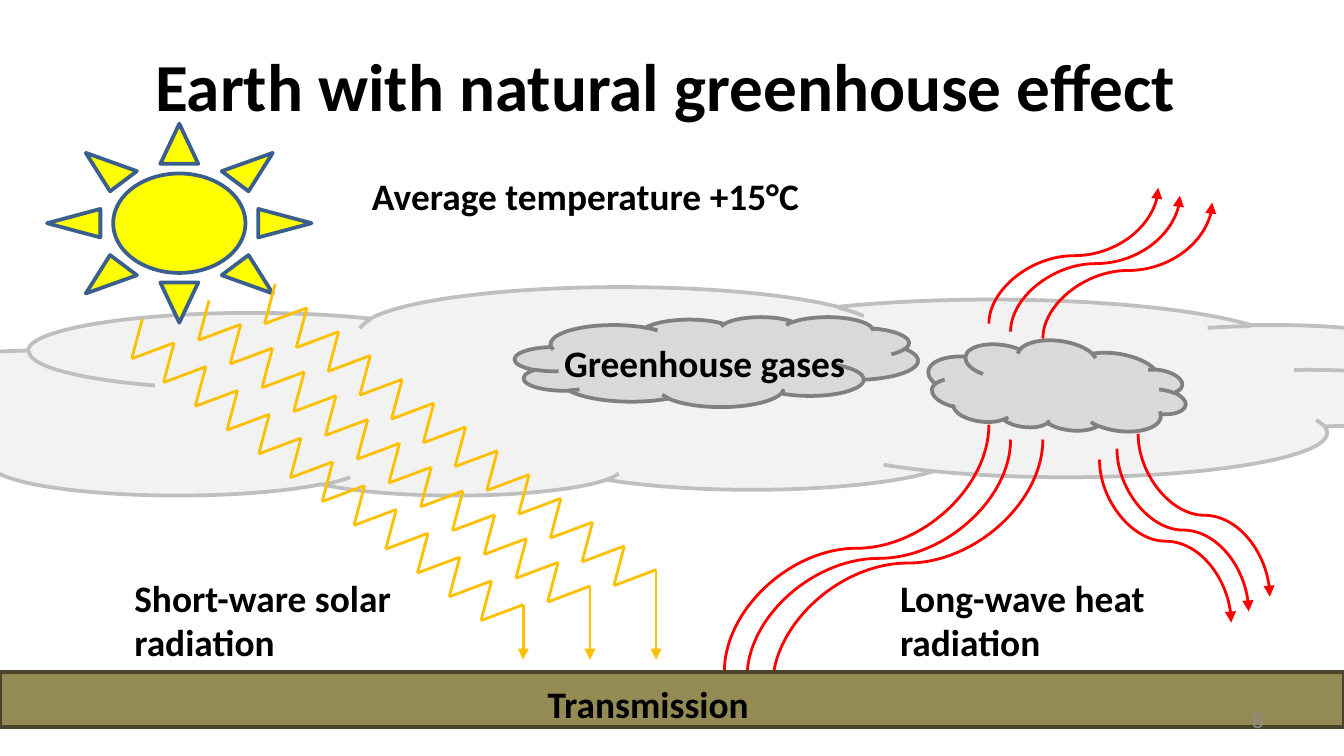
from dataclasses import dataclass

from lxml import etree
from pptx import Presentation
from pptx.dml.color import RGBColor
from pptx.enum.shapes import MSO_CONNECTOR, MSO_SHAPE
from pptx.enum.text import MSO_ANCHOR, PP_ALIGN
from pptx.oxml.ns import qn
from pptx.util import Cm, Pt

STRAIGHT, CURVE = MSO_CONNECTOR.STRAIGHT, MSO_CONNECTOR.CURVE
CLOUD, SUN, RECTANGLE = MSO_SHAPE.CLOUD, MSO_SHAPE.SUN, MSO_SHAPE.RECTANGLE
LEFT, CENTER, RIGHT = PP_ALIGN.LEFT, PP_ALIGN.CENTER, PP_ALIGN.RIGHT
TOP, MIDDLE = MSO_ANCHOR.TOP, MSO_ANCHOR.MIDDLE

BLACK = RGBColor(0x00, 0x00, 0x00)
PAGE_GREY = RGBColor(0x8C, 0x8C, 0x8C)
AIR_FILL = RGBColor(0xF2, 0xF2, 0xF2)
AIR_LINE = RGBColor(0xBF, 0xBF, 0xBF)
GAS_FILL = RGBColor(0xD9, 0xD9, 0xD9)
GAS_LINE = RGBColor(0x80, 0x80, 0x80)
SUN_FILL = RGBColor(0xFF, 0xFF, 0x00)
SUN_LINE = RGBColor(0x3A, 0x5F, 0x8C)
GROUND_FILL = RGBColor(0x94, 0x8A, 0x54)
GROUND_LINE = RGBColor(0x4A, 0x45, 0x2A)
SOLAR = RGBColor(0xFF, 0xC0, 0x00)
HEAT = RGBColor(0xFF, 0x00, 0x00)

# Solar rays, in cm
TEETH = 12
PITCH_X, PITCH_Y = 0.6, 0.45
VALLEY_X, VALLEY_Y = -0.2, 0.75
RAY_BOTTOM = 12.47


@dataclass(frozen=True)
class Point:
    """A place on the slide, in cm."""
    x: float
    y: float

    def moved(self, dx: float, dy: float) -> "Point":
        return Point(self.x + dx, self.y + dy)


@dataclass(frozen=True)
class Body:
    """A filled preset shape, in cm and degrees."""
    preset: MSO_SHAPE
    left: float
    top: float
    width: float
    height: float
    fill: RGBColor
    line: RGBColor
    rotation: float = 0


def draw_body(shapes, body: Body) -> None:
    shape = shapes.add_shape(body.preset, Cm(body.left), Cm(body.top),
                             Cm(body.width), Cm(body.height))
    shape.shadow.inherit = False
    shape.rotation = body.rotation
    shape.fill.solid()
    shape.fill.fore_color.rgb = body.fill
    shape.line.color.rgb = body.line
    shape.line.width = Pt(2)


def draw_line(shapes, kind: MSO_CONNECTOR, start: Point, end: Point,
              color: RGBColor, arrow: bool = False):
    line = shapes.add_connector(kind, Cm(start.x), Cm(start.y), Cm(end.x), Cm(end.y))
    line.line.color.rgb = color
    line.line.width = Pt(1.5)
    if arrow:
        etree.SubElement(line.line._get_or_add_ln(), qn("a:tailEnd"), type="triangle")
    etree.SubElement(line._element.spPr, qn("a:effectLst"))
    return line


def draw_heat_curve(shapes, start: Point, end: Point, arrow: bool = True) -> None:
    """An S-curve that leaves and arrives vertically: a quarter-turned connector."""
    dx, dy = end.x - start.x, end.y - start.y
    center = start.moved(dx / 2, dy / 2)
    rising = dy < 0
    reach_x = abs(dy) / 2
    reach_y = dx / 2 if rising else -dx / 2
    curve = draw_line(shapes, CURVE, center.moved(reach_x, reach_y),
                      center.moved(-reach_x, -reach_y), HEAT, arrow)
    curve._element.spPr.find(qn("a:xfrm")).set("rot", str((90 if rising else 270) * 60000))


def draw_solar_ray(shapes, start: Point) -> None:
    peak = start
    for tooth in range(1, TEETH + 1):
        valley = peak.moved(VALLEY_X, VALLEY_Y)
        next_peak = start.moved(tooth * PITCH_X, tooth * PITCH_Y)
        draw_line(shapes, STRAIGHT, peak, valley, SOLAR)
        draw_line(shapes, STRAIGHT, valley, next_peak, SOLAR)
        peak = next_peak
    draw_line(shapes, STRAIGHT, peak, Point(peak.x, RAY_BOTTOM), SOLAR, arrow=True)


def write(shapes, text: str, left: float, top: float, width: float, height: float, *,
          size: float = 20, bold: bool = True, color: RGBColor = BLACK,
          align: PP_ALIGN = LEFT, anchor: MSO_ANCHOR = TOP) -> None:
    frame = shapes.add_textbox(Cm(left), Cm(top), Cm(width), Cm(height)).text_frame
    frame.word_wrap = True
    frame.vertical_anchor = anchor
    paragraph = frame.paragraphs[0]
    paragraph.alignment = align
    run = paragraph.add_run()
    run.text = text
    run.font.name = "Calibri"
    run.font.size = Pt(size)
    run.font.bold = bold
    run.font.color.rgb = color


def main() -> None:
    prs = Presentation()
    prs.slide_width, prs.slide_height = Cm(25.4), Cm(14.29)
    shapes = prs.slides.add_slide(prs.slide_layouts[6]).shapes

    # Atmosphere, title and sun
    draw_body(shapes, Body(CLOUD, -3.71, 5.44, 31.6, 3.94, AIR_FILL, AIR_LINE, 180))
    write(shapes, "Earth with natural greenhouse effect", 0.5, 0.4, 24.15, 2.4,
          size=36, align=CENTER, anchor=MIDDLE)
    draw_body(shapes, Body(SUN, 0.89, 2.34, 5, 3.76, SUN_FILL, SUN_LINE))

    # Short-wave radiation
    for start in (Point(2.69, 6.03), Point(3.95, 5.68), Point(5.2, 5.37)):
        draw_solar_ray(shapes, start)

    # Heat from the ground up to the gases
    for start, end in ((Point(13.69, 12.7), Point(18.69, 8.03)),
                       (Point(14.12, 12.8), Point(19.1, 8.31)),
                       (Point(14.6, 12.98), Point(19.71, 8.31))):
        draw_heat_curve(shapes, start, end, arrow=False)

    # Ground and labels
    draw_body(shapes, Body(RECTANGLE, 0, 12.7, 25.4, 1.04, GROUND_FILL, GROUND_LINE))
    write(shapes, "Transmission", 10.1, 12.75, 4.6, 1.11)
    write(shapes, "Average temperature +15°C", 6.78, 3.15, 12.6, 1.11)
    write(shapes, "Short-ware solar radiation", 2.29, 10.74, 6.05, 1.96)
    write(shapes, "Long-wave heat radiation", 16.76, 10.74, 6.05, 1.96)

    # Greenhouse gases
    draw_body(shapes, Body(CLOUD, 9.73, 5.99, 7.62, 1.7, GAS_FILL, GAS_LINE))
    draw_body(shapes, Body(CLOUD, 17.53, 6.45, 4.9, 1.7, GAS_FILL, GAS_LINE, 187.2))
    write(shapes, "Greenhouse gases", 10.41, 6.3, 7.06, 1.11)

    # Heat escaping to space
    for start in (Point(18.69, 6.12), Point(19.1, 6.27), Point(19.71, 6.4)):
        draw_heat_curve(shapes, start, start.moved(3.2, -2.57))

    # Heat sent back to the ground
    for start in (Point(20.78, 8.69), Point(21.11, 8.48), Point(21.51, 8.2)):
        draw_heat_curve(shapes, start, start.moved(2.49, 3.08))

    # Page number
    write(shapes, "8", 18.21, 13.23, 5.92, 0.76, size=12, bold=False,
          color=PAGE_GREY, align=RIGHT, anchor=MIDDLE)

    prs.save("out.pptx")


if __name__ == "__main__":
    main()
